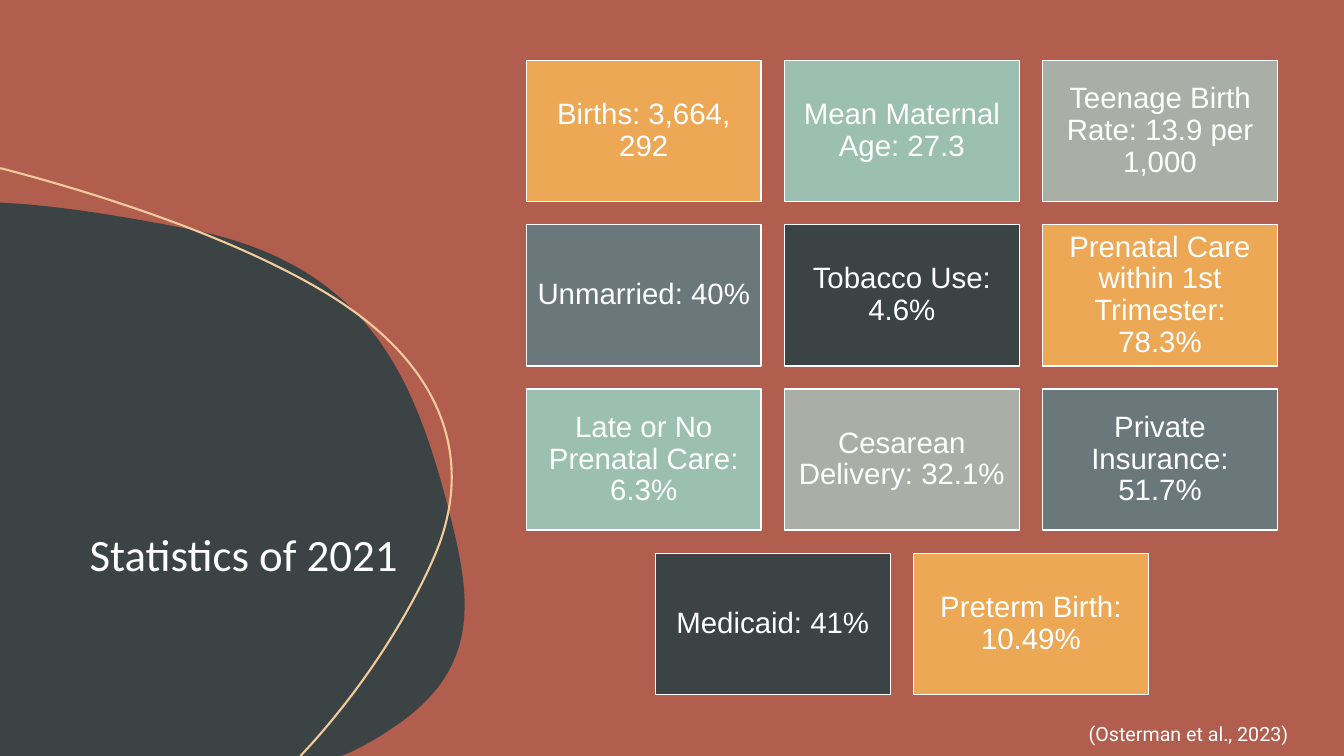
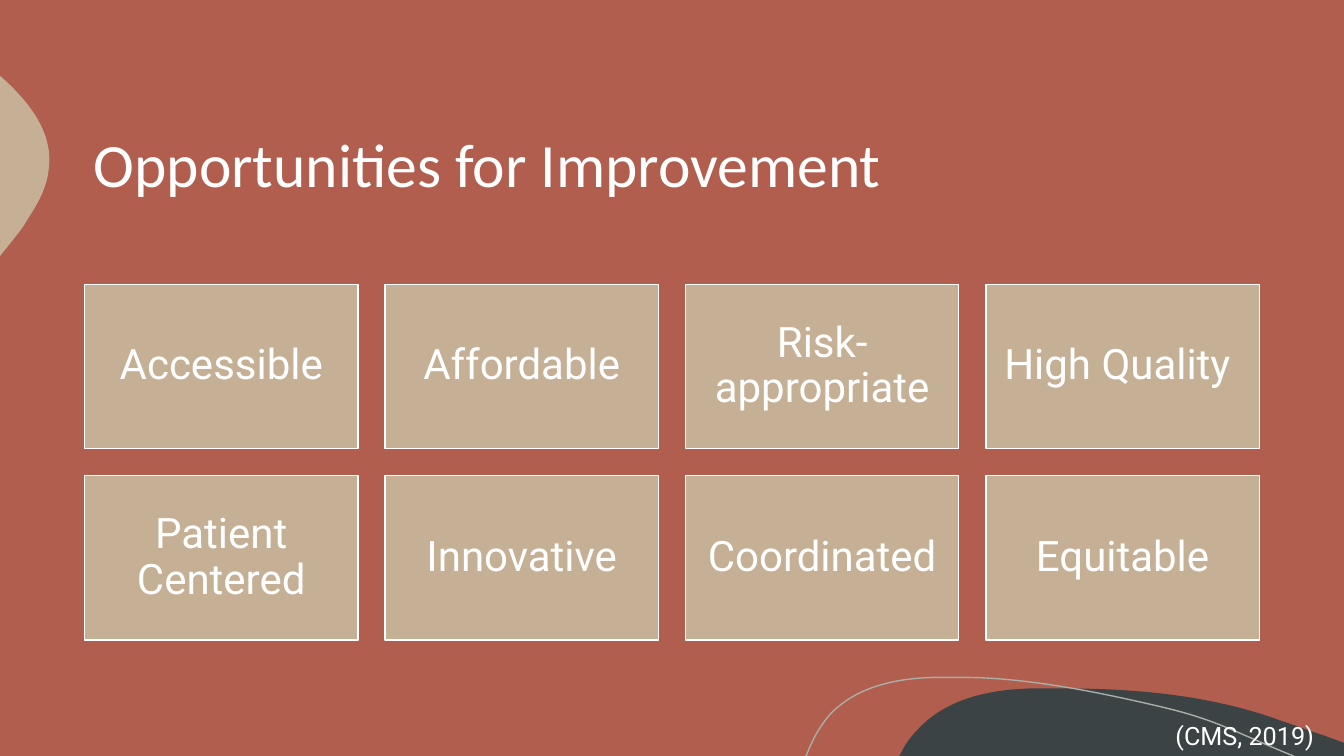
"""Build two slides on birth statistics and goals for better care."""
from dataclasses import dataclass
from itertools import cycle

from lxml import etree
from pptx import Presentation
from pptx.dml.color import RGBColor
from pptx.enum.shapes import MSO_SHAPE
from pptx.enum.text import MSO_ANCHOR, PP_ALIGN
from pptx.oxml.ns import qn
from pptx.util import Inches, Pt

RECT = MSO_SHAPE.RECTANGLE
TOP, MIDDLE, BOTTOM = MSO_ANCHOR.TOP, MSO_ANCHOR.MIDDLE, MSO_ANCHOR.BOTTOM
LEFT, CENTER = PP_ALIGN.LEFT, PP_ALIGN.CENTER
WIDE, HIGH = 13.33, 7.5


@dataclass(frozen=True)
class Theme:
    rust: str = "B15E4E"
    dark: str = "3B4345"
    sand: str = "C5B096"
    gray: str = "A9AEA7"
    cream: str = "F1CB9C"
    orange: str = "ECA855"
    mint: str = "9BBFB0"
    slate: str = "6A787C"
    white: str = "FFFFFF"
    head: str = "Calibri"
    body: str = "Roboto"
    plain: str = "Arial"
    large: int = 44
    title: int = 32
    goal: int = 30
    stat: int = 21
    cite: int = 18
    small: int = 14


THEME = Theme()

MOTIF = [
    ((8.92, 6.83, 4.41, 0.67),
     [(10.54, 6.83), (11.28, 6.83, 12.04, 6.9, 12.73, 7.16),
      (12.86, 7.2, 12.98, 7.25, 13.11, 7.29), (13.33, 7.37), (13.33, 7.5),
      (8.92, 7.5), (8.98, 7.39), (9.02, 7.33, 9.06, 7.28, 9.11, 7.23),
      (9.39, 6.93, 9.82, 6.84, 10.23, 6.83),
      (10.33, 6.83, 10.43, 6.83, 10.54, 6.83)], THEME.dark, 0),
    ((0, 0.75, 0.49, 1.79),
     [(0, 0.75), (0.01, 0.76), (0.3, 1.02, 0.54, 1.33, 0.48, 1.7),
      (0.46, 1.87, 0.37, 2.03, 0.27, 2.18), (0.24, 2.24, 0.17, 2.33, 0.08, 2.44),
      (0, 2.54)], THEME.sand, 0),
    ((7.99, 6.72, 4.83, 0.79),
     [(7.99, 7.5), (8, 7.49), (8.06, 7.33, 8.14, 7.19, 8.24, 7.08),
      (8.5, 6.81, 8.89, 6.73, 9.26, 6.72), (9.55, 6.72),
      (10.22, 6.72, 11, 6.89, 11.55, 7.02),
      (12.09, 7.15, 12.26, 7.27, 12.83, 7.5)], THEME.gray, 1),
]

STATS = {
    "title": ("Statistics of 2021", (0.79, 3.32, 3.33, 2.5), THEME.title, BOTTOM),
    "cite": ("(Osterman et al., 2023)", (10.7, 7.11, 2.64, 0.34), THEME.small),
    "cards": [
        "Births: 3,664, 292", "Mean Maternal Age: 27.3",
        "Teenage Birth Rate: 13.9 per 1,000", "Unmarried: 40%",
        "Tobacco Use: 4.6%", "Prenatal Care within 1st Trimester: 78.3%",
        "Late or No Prenatal Care: 6.3%", "Cesarean Delivery: 32.1%",
        "Private Insurance: 51.7%", "Medicaid: 41%", "Preterm Birth: 10.49%",
    ],
    "fills": [THEME.orange, THEME.mint, THEME.gray, THEME.slate, THEME.dark],
    "grid": {"x": 5.22, "y": 0.6, "w": 2.33, "h": 1.4, "gap": 0.23, "cols": 3},
    "type": (THEME.plain, THEME.stat),
    "inset": 0.09,
    "cover": THEME.rust,
    "curves": [
        ((0, 2.01, 4.61, 5.49),
         [(0, 2.01), (0.17, 2.02), (0.72, 2.06, 1.29, 2.16, 1.86, 2.27),
          (3.62, 2.61, 4.09, 3.7, 4.43, 4.98), (4.65, 5.83, 4.84, 6.61, 3.88, 7.23),
          (3.75, 7.32, 3.61, 7.4, 3.46, 7.47), (3.38, 7.5), (0, 7.5), (0, 2.01)],
         THEME.dark, 0),
        ((0, 1.67, 4.48, 5.83),
         [(0, 1.67), (0.01, 1.67), (1.39, 2.03, 2.58, 2.49, 3.32, 2.96),
          (4.43, 3.67, 4.66, 4.56, 4.36, 5.39), (4.22, 5.77, 3.77, 6.66, 2.98, 7.5)],
         THEME.cream, 1.5),
    ],
}

GOALS = {
    "title": ("Opportunities for Improvement", (0.83, 0.83, 11.67, 1.67),
              THEME.large, MIDDLE),
    "cite": ("(CMS, 2019)", (11.56, 7.1, 1.89, 0.4), THEME.cite),
    "cards": [
        "Accessible", "Affordable", "Risk-appropriate", "High Quality ",
        "Patient Centered", "Innovative", "Coordinated", "Equitable",
    ],
    "fills": [THEME.sand],
    "grid": {"x": 0.84, "y": 2.82, "w": 2.71, "h": 1.63, "gap": 0.27, "cols": 4},
    "type": (THEME.body, THEME.goal),
    "inset": 0.12,
    "cover": None,
    "curves": [],
}


def paint(fill, color):
    fill.solid()
    fill.fore_color.rgb = RGBColor.from_string(color)


def draw_path(path, route, left, top, closed):
    for node in list(path):
        path.remove(node)
    for i, part in enumerate(route):
        tag = "a:cubicBezTo" if len(part) == 6 else "a:lnTo" if i else "a:moveTo"
        node = etree.SubElement(path, qn(tag))
        for x, y in zip(part[::2], part[1::2]):
            etree.SubElement(node, qn("a:pt"), x=str(Inches(x - left)),
                             y=str(Inches(y - top)))
    if closed:
        etree.SubElement(path, qn("a:close"))


def add_curve(slide, box, route, color, width):
    left, top, wide, high = box
    pen = slide.shapes.build_freeform(Inches(left), Inches(top))
    pen.add_line_segments([(Inches(left + wide), Inches(top + high))])
    shape = pen.convert_to_shape()
    path = next(shape.element.iter(qn("a:path")))
    draw_path(path, route, left, top, not width)
    shape.shadow.inherit = False
    if width:
        shape.fill.background()
        paint(shape.line.fill, color)
        shape.line.width = Pt(width)
    else:
        paint(shape.fill, color)
        shape.line.fill.background()
    return shape


def add_rect(slide, box, color):
    rect = slide.shapes.add_shape(RECT, *map(Inches, box))
    rect.shadow.inherit = False
    paint(rect.fill, color)
    rect.line.fill.background()
    return rect


def set_text(shape, text, font, size, anchor=TOP, align=LEFT, space=1.0):
    frame = shape.text_frame
    frame.text = text
    frame.word_wrap = True
    frame.vertical_anchor = anchor
    para = frame.paragraphs[0]
    para.alignment = align
    para.line_spacing = space
    style = para.runs[0].font
    style.name = font
    style.size = Pt(size)
    style.color.rgb = RGBColor.from_string(THEME.white)


def add_label(slide, text, box, size, font, anchor=TOP, space=1.0):
    label = slide.shapes.add_textbox(*map(Inches, box))
    set_text(label, text, font, size, anchor, space=space)


def add_card(slide, text, box, color, kind, inset):
    card = add_rect(slide, box, color)
    paint(card.line.fill, THEME.white)
    card.line.width = Pt(1)
    set_text(card, text, *kind, MIDDLE, CENTER, 0.9)
    frame = card.text_frame
    frame.margin_left = frame.margin_right = Inches(inset)
    frame.margin_top = frame.margin_bottom = Inches(inset)


def place(count, x, y, w, h, gap, cols):
    for i in range(count):
        row, col = divmod(i, cols)
        spare = cols - min(cols, count - row * cols)
        yield x + (col + spare / 2) * (w + gap), y + row * (h + gap), w, h


def add_page(deck, page):
    slide = deck.slides.add_slide(deck.slide_layouts[6])
    if page["cover"]:
        add_rect(slide, (0, 0, WIDE, HIGH), page["cover"])
    for curve in page["curves"]:
        add_curve(slide, *curve)
    text, box, size, anchor = page["title"]
    add_label(slide, text, box, size, THEME.head, anchor, 0.9)
    cards = page["cards"]
    boxes = place(len(cards), **page["grid"])
    for text, box, color in zip(cards, boxes, cycle(page["fills"])):
        add_card(slide, text, box, color, page["type"], page["inset"])
    add_label(slide, *page["cite"], THEME.body)
    return slide


def set_master(deck, slide):
    master = deck.slide_master
    paint(master.background.fill, THEME.rust)
    tree = master.element.cSld.spTree
    for curve in MOTIF:
        tree.append(add_curve(slide, *curve).element)


def main():
    deck = Presentation()
    deck.slide_width, deck.slide_height = Inches(WIDE), Inches(HIGH)
    slides = [add_page(deck, page) for page in (STATS, GOALS)]
    set_master(deck, slides[0])
    deck.save("out.pptx")


if __name__ == "__main__":
    main()
